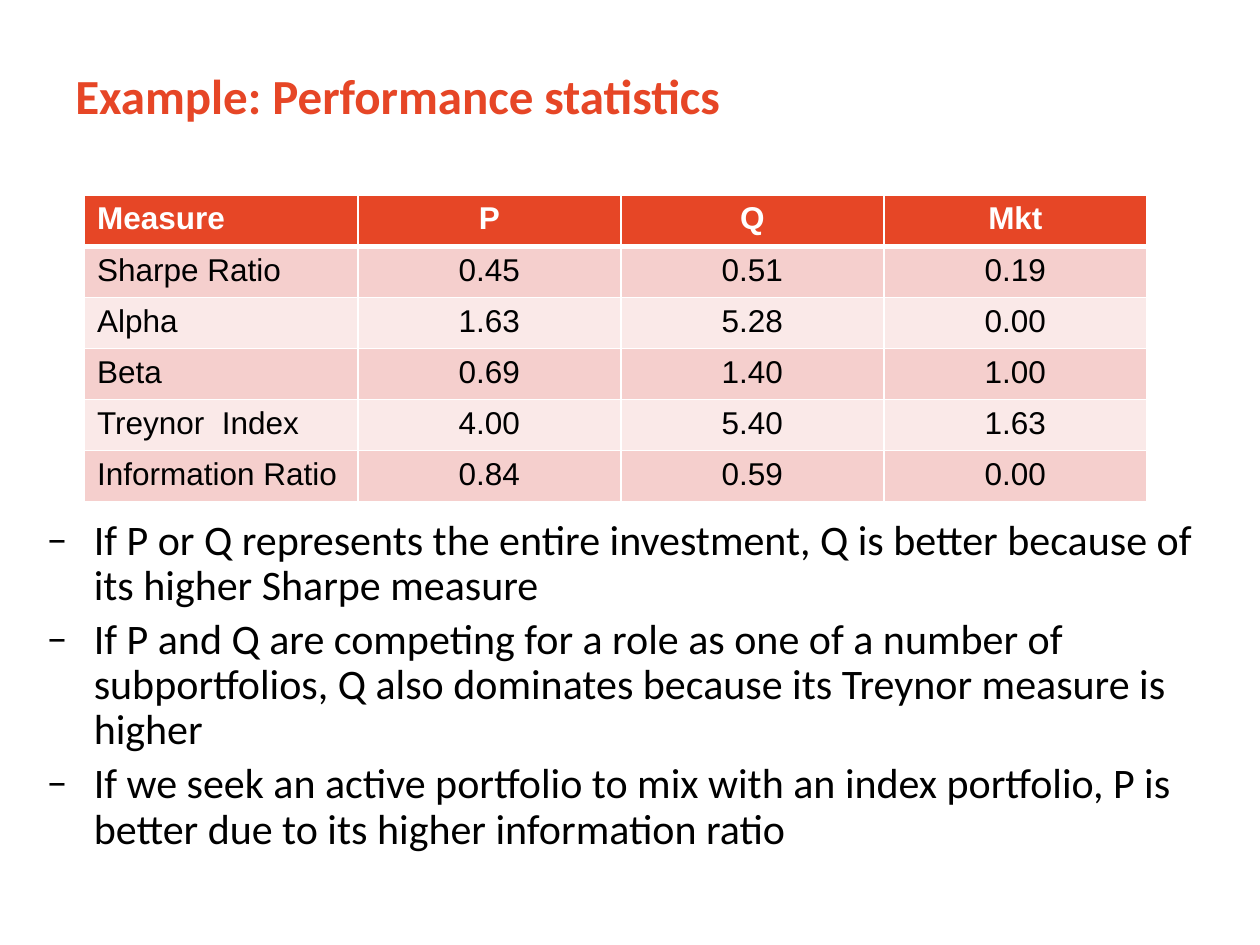
"""Build the performance statistics slide with its table and conclusions."""
from dataclasses import astuple, dataclass

from lxml.etree import SubElement
from pptx import Presentation
from pptx.dml.color import RGBColor
from pptx.enum.text import MSO_ANCHOR, PP_ALIGN
from pptx.oxml.ns import qn
from pptx.util import Pt

ORANGE = RGBColor(0xE6, 0x46, 0x26)
ROSE = RGBColor(0xF5, 0xCF, 0xCD)
BLUSH = RGBColor(0xFA, 0xE9, 0xE8)
WHITE = RGBColor(0xFF, 0xFF, 0xFF)
BLACK = RGBColor(0, 0, 0)


@dataclass(frozen=True)
class Measure:
    name: str
    p: str
    q: str
    market: str


@dataclass(frozen=True)
class Area:
    left: float
    top: float
    width: float
    height: float


@dataclass(frozen=True)
class TextStyle:
    font: str
    size: float
    color: RGBColor
    bold: bool = False


MEASURES = [
    Measure("Measure", "P", "Q", "Mkt"),
    Measure("Sharpe Ratio", "0.45", "0.51", "0.19"),
    Measure("Alpha", "1.63", "5.28", "0.00"),
    Measure("Beta", "0.69", "1.40", "1.00"),
    Measure("Treynor  Index", "4.00", "5.40", "1.63"),
    Measure("Information Ratio", "0.84", "0.59", "0.00"),
]
CONCLUSIONS = [
    "If P or Q represents the entire investment, Q is better because of its higher Sharpe measure",
    "If P and Q are competing for a role as one of a number of subportfolios, "
    "Q also dominates because its Treynor measure is higher",
    "If we seek an active portfolio to mix with an index portfolio, "
    "P is better due to its higher information ratio",
]
COLUMN_WIDTHS = [156.2, 150.3, 150.3, 150.3]
ROW_HEIGHT = 29.2


def style_paragraph(para, style: TextStyle) -> None:
    for span in para.runs:
        span.font.name = style.font
        span.font.size = Pt(style.size)
        span.font.bold = style.bold
        span.font.color.rgb = style.color


def add_text(page, area: Area, text: str, style: TextStyle, anchor: MSO_ANCHOR):
    box = page.shapes.add_textbox(*(Pt(length) for length in astuple(area)))
    frame = box.text_frame
    frame.word_wrap = True
    frame.vertical_anchor = anchor
    frame.margin_top = frame.margin_bottom = Pt(0)
    frame.text = text
    for para in frame.paragraphs:
        style_paragraph(para, style)
    return box


def add_dash(para, indent: float) -> None:
    properties = para._p.get_or_add_pPr()
    properties.set("marL", str(Pt(indent)))
    properties.set("indent", str(-Pt(indent)))
    SubElement(properties, qn("a:buFont"), typeface="Calibri")
    SubElement(properties, qn("a:buChar"), char="–")


def add_borders(cell, top: float, bottom: float) -> None:
    properties = cell._tc.get_or_add_tcPr()
    for side, width in (("L", 1), ("R", 1), ("T", top), ("B", bottom)):
        line = SubElement(properties, qn(f"a:ln{side}"), w=str(Pt(width)))
        fill = SubElement(line, qn("a:solidFill"))
        SubElement(fill, qn("a:srgbClr"), val=str(WHITE))


def add_measures(page, left: float, top: float) -> None:
    frame = page.shapes.add_table(
        len(MEASURES), len(COLUMN_WIDTHS), Pt(left), Pt(top),
        Pt(sum(COLUMN_WIDTHS)), Pt(ROW_HEIGHT * len(MEASURES)),
    )
    table = frame.table
    for column, width in zip(table.columns, COLUMN_WIDTHS):
        column.width = Pt(width)
    for row_index, measure in enumerate(MEASURES):
        header = row_index == 0
        fill = ORANGE if header else (ROSE if row_index % 2 else BLUSH)
        style = TextStyle("Arial", 18, WHITE if header else BLACK, header)
        table.rows[row_index].height = Pt(ROW_HEIGHT)
        for column_index, value in enumerate(astuple(measure)):
            cell = table.cell(row_index, column_index)
            add_borders(cell, 3 if row_index == 1 else 1, 3 if header else 1)
            cell.fill.solid()
            cell.fill.fore_color.rgb = fill
            cell.text_frame.text = value
            para = cell.text_frame.paragraphs[0]
            para.alignment = PP_ALIGN.CENTER if column_index else PP_ALIGN.LEFT
            style_paragraph(para, style)


def add_conclusions(page, area: Area) -> None:
    box = add_text(page, area, "\n".join(CONCLUSIONS),
                   TextStyle("Calibri", 24, BLACK), MSO_ANCHOR.TOP)
    for para in box.text_frame.paragraphs:
        para.line_spacing = 0.9
        para.space_after = Pt(4.8)
        add_dash(para, 27)


def main() -> None:
    deck = Presentation()
    deck.slide_width, deck.slide_height = Pt(720), Pt(540)
    page = deck.slides.add_slide(deck.slide_layouts[6])
    add_text(page, Area(36, 9.5, 648, 90), "Example: Performance statistics",
             TextStyle("Calibri", 28, ORANGE, True), MSO_ANCHOR.MIDDLE)
    add_conclusions(page, Area(19.5, 296.5, 682, 212))
    add_measures(page, 48.3, 111.5)
    deck.save("out.pptx")


if __name__ == "__main__":
    main()
